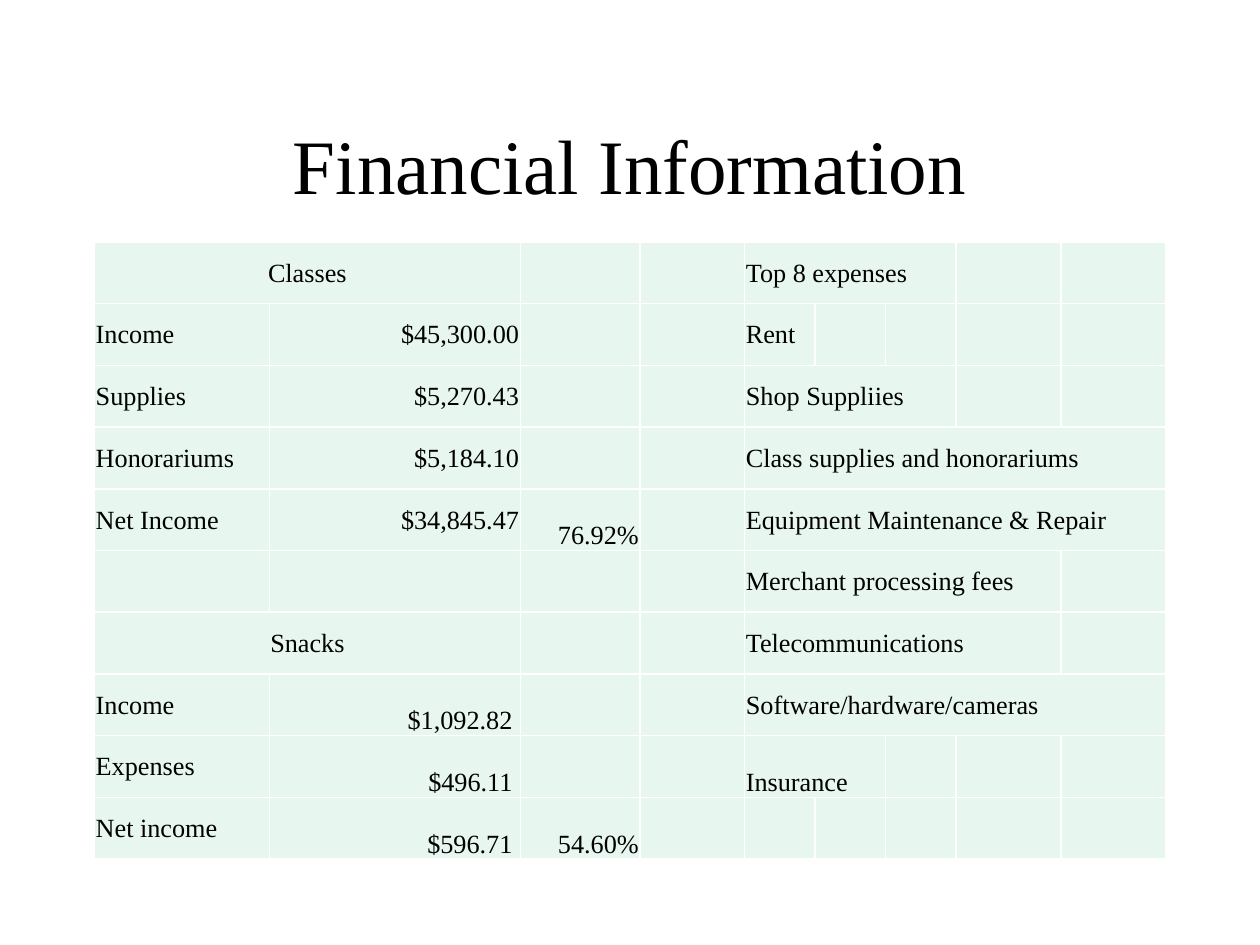
"""Build the Financial Information slide with its table of income and expenses."""
import pptx
import pptx.dml.color
import pptx.enum.text
import pptx.oxml
import pptx.oxml.ns
import pptx.util

Inches = pptx.util.Inches
ALIGN = pptx.enum.text.PP_ALIGN
ANCHOR = pptx.enum.text.MSO_ANCHOR

THEME = {
    "font": "Times New Roman", "text": "000000", "cell": "E7F6EF",
    "border": "FFFFFF", "border_width": 1, "title_size": 44, "table_size": 15,
}
TITLE = "Financial Information"
COLUMN_WIDTHS = [1.39, 1.99, 0.95, 0.83, 0.56, 0.56, 0.56, 0.83, 0.83]
ROW_HEIGHT = 0.49
MIDDLE, BOTTOM = ANCHOR.MIDDLE, ANCHOR.BOTTOM

# label, amount, amount anchor, share
ACCOUNTS = [
    ("Classes", "", MIDDLE, ""),
    ("Income", "$45,300.00", MIDDLE, ""),
    ("Supplies", "$5,270.43", MIDDLE, ""),
    ("Honorariums", "$5,184.10", MIDDLE, ""),
    ("Net Income", "$34,845.47", MIDDLE, "76.92%"),
    ("", "", MIDDLE, ""),
    ("Snacks", "", MIDDLE, ""),
    ("Income", "$1,092.82 ", BOTTOM, ""),
    ("Expenses", "$496.11 ", BOTTOM, ""),
    ("Net income", "$596.71 ", BOTTOM, "54.60%"),
]
# text, columns spanned, anchor
EXPENSES = [
    ("Top 8 expenses", 3, MIDDLE),
    ("Rent", 1, MIDDLE),
    ("Shop Suppliies", 3, MIDDLE),
    ("Class supplies and honorariums", 5, MIDDLE),
    ("Equipment Maintenance & Repair", 5, MIDDLE),
    ("Merchant processing fees", 4, MIDDLE),
    ("Telecommunications", 4, MIDDLE),
    ("Software/hardware/cameras", 5, MIDDLE),
    ("Insurance", 2, BOTTOM),
    ("", 1, MIDDLE),
]


def write_text(frame, text, *, size, align=ALIGN.LEFT, anchor=MIDDLE):
    """Put one formatted paragraph in a text frame."""
    frame.vertical_anchor = anchor
    para = frame.paragraphs[0]
    para.alignment = align
    span = para.add_run()
    span.text = text
    span.font.name = THEME["font"]
    span.font.size = pptx.util.Pt(size)
    span.font.bold = False
    span.font.color.rgb = pptx.dml.color.RGBColor.from_string(THEME["text"])


def style_cell(cell):
    """Give a cell its fill, margins and four borders."""
    cell.fill.solid()
    cell.fill.fore_color.rgb = pptx.dml.color.RGBColor.from_string(THEME["cell"])
    cell.margin_left = cell.margin_right = cell.margin_top = Inches(0.01)
    cell.margin_bottom = 0
    properties = cell._tc.get_or_add_tcPr()
    for position, side in enumerate("LRTB"):
        border = pptx.oxml.parse_xml(
            f'<a:ln{side} {pptx.oxml.ns.nsdecls("a")} '
            f'w="{pptx.util.Pt(THEME["border_width"])}"><a:solidFill>'
            f'<a:srgbClr val="{THEME["border"]}"/></a:solidFill></a:ln{side}>')
        properties.insert(position, border)


def fill_cell(table, row, column, text, *, columns=1, **style):
    """Write a cell, merging it across columns when needed."""
    cell = table.cell(row, column)
    if columns > 1:
        cell.merge(table.cell(row, column + columns - 1))
    if text:
        write_text(cell.text_frame, text, size=THEME["table_size"], **style)
        cell.vertical_anchor = style.get("anchor", MIDDLE)


def add_title(page):
    """Add the centred slide title."""
    box = page.shapes.add_textbox(Inches(0.75), Inches(0.67), Inches(8.5), Inches(1.25))
    box.text_frame.word_wrap = True
    write_text(box.text_frame, TITLE, size=THEME["title_size"], align=ALIGN.CENTER)


def add_finances(page):
    """Add the table of accounts and top expenses."""
    count = len(ACCOUNTS)
    table = page.shapes.add_table(
        count, len(COLUMN_WIDTHS), Inches(0.75), Inches(1.92),
        Inches(sum(COLUMN_WIDTHS)), Inches(ROW_HEIGHT * count)).table
    table.first_row = table.horz_banding = False
    for column, width in zip(table.columns, COLUMN_WIDTHS):
        column.width = Inches(width)
    for row in table.rows:
        row.height = Inches(ROW_HEIGHT)
    for cell in table.iter_cells():
        style_cell(cell)
    for row, (label, amount, anchor, share) in enumerate(ACCOUNTS):
        heading = bool(label) and not amount
        fill_cell(table, row, 0, label, columns=2 if heading else 1,
                  align=ALIGN.CENTER if heading else ALIGN.LEFT)
        fill_cell(table, row, 1, amount, align=ALIGN.RIGHT, anchor=anchor)
        fill_cell(table, row, 2, share, align=ALIGN.RIGHT, anchor=BOTTOM)
    for row, (text, columns, anchor) in enumerate(EXPENSES):
        fill_cell(table, row, 4, text, columns=columns, anchor=anchor)


def main():
    """Build and save the deck."""
    deck = pptx.Presentation()
    deck.slide_width, deck.slide_height = Inches(10), Inches(7.5)
    page = deck.slides.add_slide(deck.slide_layouts[6])
    add_title(page)
    add_finances(page)
    deck.save("out.pptx")


if __name__ == "__main__":
    main()
